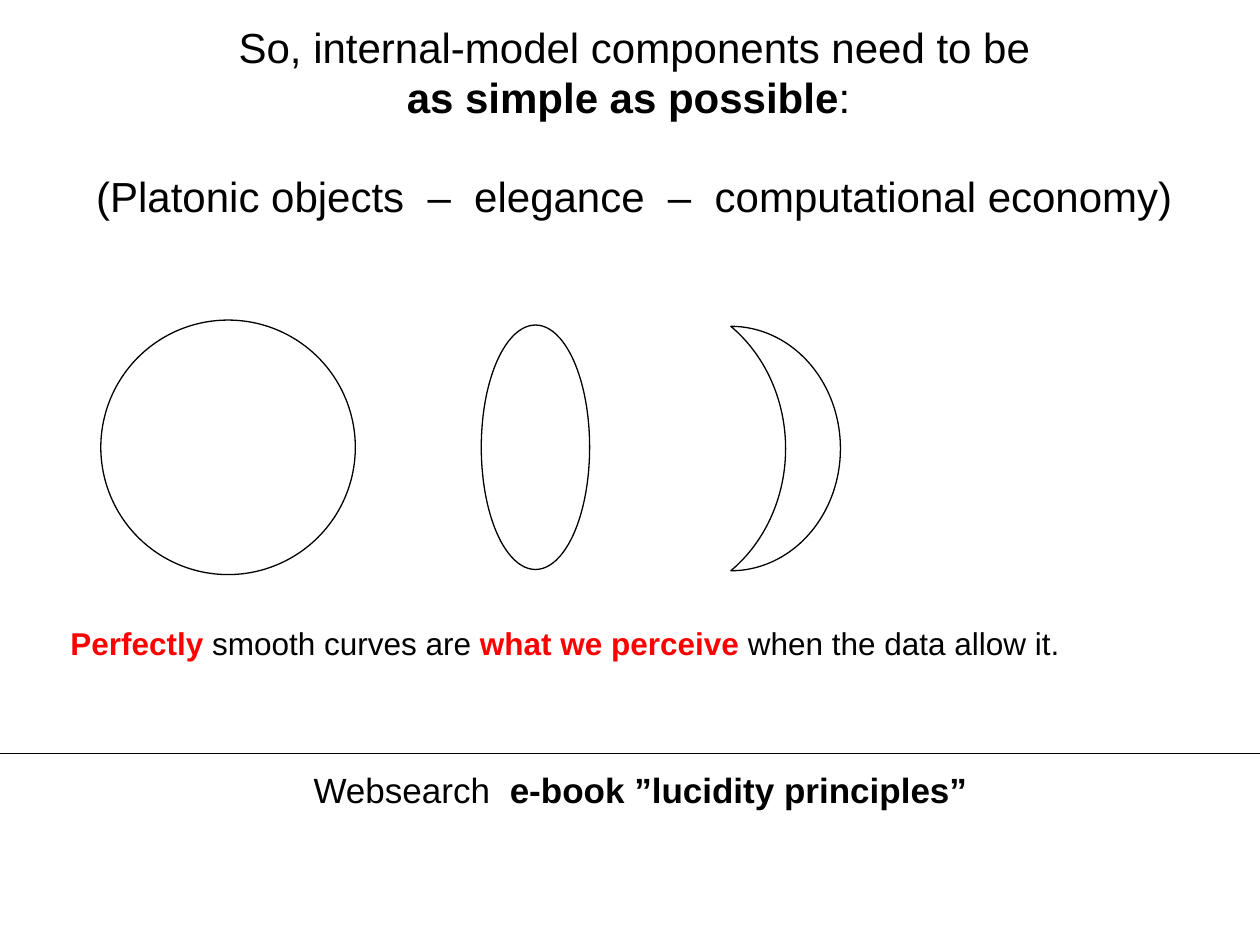
from lxml import etree
from pptx import Presentation
from pptx.dml.color import RGBColor
from pptx.enum.shapes import MSO_CONNECTOR, MSO_SHAPE
from pptx.enum.text import PP_ALIGN
from pptx.oxml.ns import qn
from pptx.util import Inches, Pt

OVAL, MOON = MSO_SHAPE.OVAL, MSO_SHAPE.MOON
LINE = MSO_CONNECTOR.STRAIGHT
LEFT, CENTER = PP_ALIGN.LEFT, PP_ALIGN.CENTER
COLS, ROWS = 20, 15
COLORS = {"ink": "000000", "accent": "FF0000"}


class Board:
    font = "Arial"
    weight = Pt(0.75)

    def __init__(self, deck):
        self.slide = deck.slides.add_slide(deck.slide_layouts[6])
        self.col = deck.slide_width / COLS
        self.row = deck.slide_height / ROWS

    def place(self, x, y, w, h):
        return [round(n) for n in (x * self.col, y * self.row, w * self.col, h * self.row)]

    def color(self, name):
        return RGBColor.from_string(COLORS[name])

    def stroke(self, item):
        item.line.color.rgb = self.color("ink")
        item.line.width = self.weight

    def curve(self, kind, x, y, w, h, turn=0):
        shape = self.slide.shapes.add_shape(kind, *self.place(x, y, w, h))
        shape.rotation = turn
        shape.shadow.inherit = False
        shape.fill.background()
        self.stroke(shape)

    def rule(self, y):
        x1, y1, x2, _ = self.place(0, y, COLS, 0)
        line = self.slide.shapes.add_connector(LINE, x1, y1, x2, y1)
        self.stroke(line)
        etree.SubElement(line._element.spPr, qn("a:effectLst"))

    def text(self, x, y, w, h, lines, size, align=LEFT):
        frame = self.slide.shapes.add_textbox(*self.place(x, y, w, h)).text_frame
        frame.word_wrap = True
        for i, (gap, runs) in enumerate(lines):
            para = frame.add_paragraph() if i else frame.paragraphs[0]
            para.alignment = align
            para.space_before = Pt(gap)
            for words, bold, color in runs:
                run = para.add_run()
                run.text = words
                run.font.name = self.font
                run.font.size = Pt(size)
                run.font.bold = bold
                run.font.color.rgb = self.color(color)


def main():
    deck = Presentation()
    deck.slide_width, deck.slide_height = Inches(10), Inches(7.5)
    board = Board(deck)

    board.rule(11.96)
    board.curve(MOON, 11.6, 5.18, 1.74, 3.88, turn=180)
    board.curve(OVAL, 7.64, 5.16, 1.72, 3.88)
    board.curve(OVAL, 1.6, 5.08, 4.04, 4.04)

    board.text(0.92, 9.8, 16.4, 0.8, [(0, [
        ("Perfectly ", True, "accent"),
        ("smooth curves are ", False, "ink"),
        ("what we perceive", True, "accent"),
        (" when the data allow it.", False, "ink"),
    ])], 18)
    board.text(1.24, 0.24, 17.66, 3.44, [
        (0, [("So, internal-model components need to be", False, "ink")]),
        (0, [("as simple as possible", True, "ink"), (": ", False, "ink")]),
        (27.6, [("(Platonic objects  –  elegance  –  computational economy)", False, "ink")]),
    ], 24, CENTER)
    board.text(4.78, 12.1, 10.88, 0.88, [(0, [
        ("Websearch  ", False, "ink"),
        ("e-book ”lucidity principles”", True, "ink"),
    ])], 20)

    deck.save("out.pptx")


if __name__ == "__main__":
    main()
